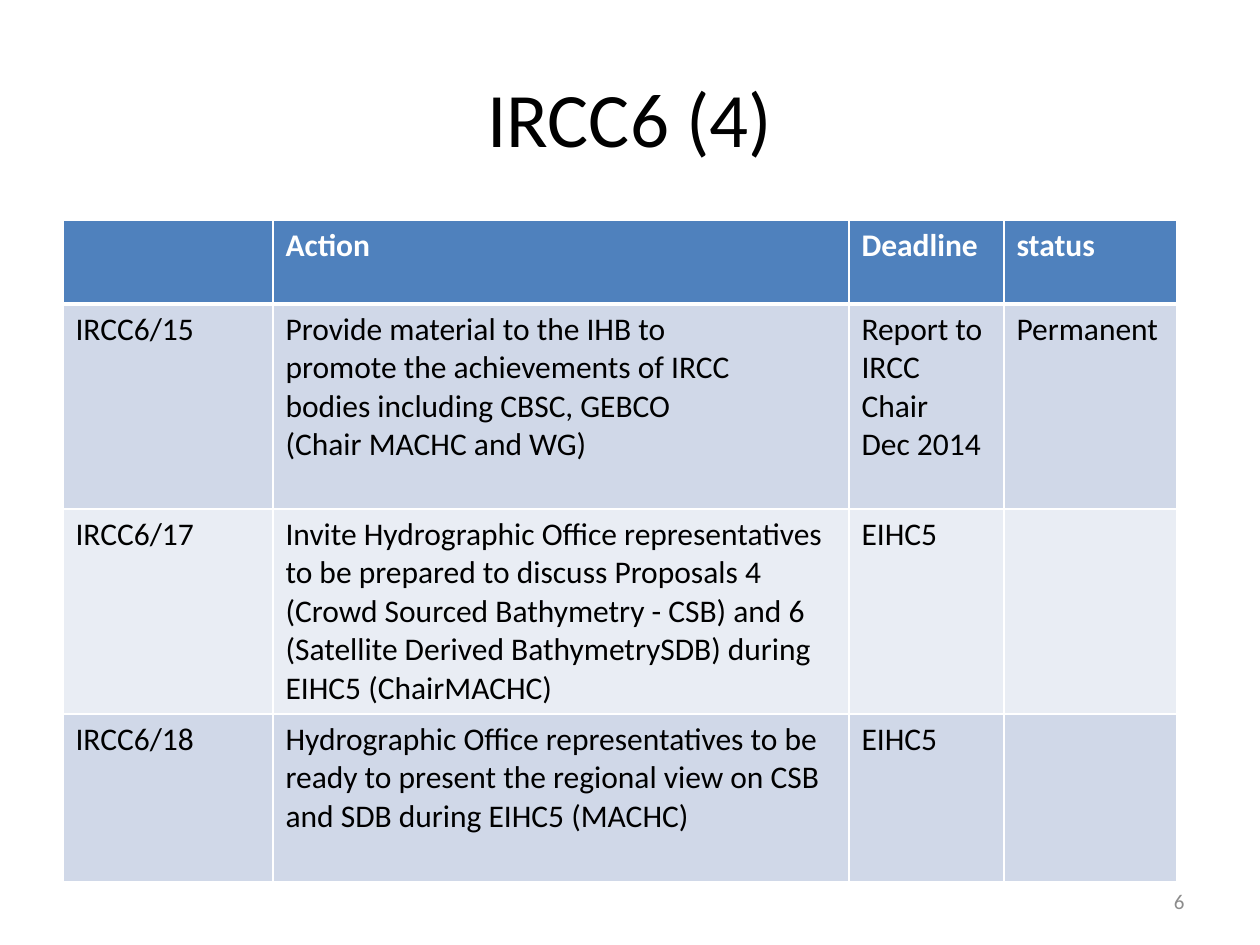
from lxml.etree import SubElement
from pptx import Presentation
from pptx.dml.color import RGBColor
from pptx.enum.text import MSO_ANCHOR, PP_ALIGN
from pptx.oxml.ns import qn
from pptx.util import Pt

PX = 914400 / 126  # EMU per px
THEME = {
    "font": "Calibri",
    "title": {"size": 44, "color": "000000", "bold": False},
    "number": {"size": 12, "color": "8C8C8C", "bold": False},
    "head": {"size": 18, "color": "FFFFFF", "bold": True},
    "body": {"size": 18, "color": "000000", "bold": False},
    "head_fill": "4F81BD",
    "bands": ["E9EDF4", "D0D8E8"],
    "border": "FFFFFF",
}


def px(n):
    return round(n * PX)


def write(tf, lines, style, align=PP_ALIGN.LEFT):
    """Fill a text frame with one paragraph per line."""
    tf.word_wrap = True
    for i, line in enumerate(lines):
        p = tf.paragraphs[0] if i == 0 else tf.add_paragraph()
        p.alignment = align
        r = p.add_run()
        r.text = line
        fmt = {"name": THEME["font"], "size": Pt(style["size"]), "bold": style["bold"]}
        for key, value in fmt.items():
            setattr(r.font, key, value)
        r.font.color.rgb = RGBColor.from_string(style["color"])


prs = Presentation()
prs.slide_width, prs.slide_height = px(1260), px(945)
s = prs.slides.add_slide(prs.slide_layouts[6])

# Title and slide number
for box, text, style, align in [
    ((63, 38, 1134, 158), "IRCC6 (4)", "title", PP_ALIGN.CENTER),
    ((903, 876, 294, 50), "6", "number", PP_ALIGN.RIGHT),
]:
    sp = s.shapes.add_textbox(*map(px, box))
    sp.text_frame.vertical_anchor = MSO_ANCHOR.MIDDLE
    write(sp.text_frame, [text], THEME[style], align)

# Table content: each cell is a list of paragraphs
rows = [
    [[], ["Action"], ["Deadline"], ["status"]],
    [
        ["IRCC6/15"],
        ["Provide material to the IHB to", "promote the achievements of IRCC",
         "bodies including CBSC, GEBCO", "(Chair MACHC and WG)"],
        ["Report to", "IRCC Chair", "Dec 2014"],
        ["Permanent"],
    ],
    [
        ["IRCC6/17"],
        ["Invite Hydrographic Office representatives to be prepared to discuss "
         "Proposals 4 (Crowd Sourced Bathymetry - CSB) and 6",
         "(Satellite Derived BathymetrySDB) during EIHC5 (ChairMACHC)"],
        ["EIHC5"],
        [],
    ],
    [
        ["IRCC6/18"],
        ["Hydrographic Office representatives to be ready to present the "
         "regional view on CSB", "and SDB during EIHC5 (MACHC)"],
        ["EIHC5"],
        [],
    ],
]
widths = [210, 576, 155, 173]
heights = [84, 205, 205, 168]

# Table grid
table = s.shapes.add_table(
    len(rows), len(widths), px(63), px(220), px(sum(widths)), px(sum(heights))
).table
for col, width in zip(table.columns, widths):
    col.width = px(width)
for row, height in zip(table.rows, heights):
    row.height = px(height)

# Cells: borders, band fill, text
for i, row in enumerate(rows):
    for j, lines in enumerate(row):
        cell = table.cell(i, j)
        tcPr = cell._tc.get_or_add_tcPr()
        for side in "LRTB":
            under_head = (i, side) in [(0, "B"), (1, "T")]
            ln = SubElement(tcPr, qn(f"a:ln{side}"), w=str(Pt(3 if under_head else 1)))
            fill = SubElement(ln, qn("a:solidFill"))
            SubElement(fill, qn("a:srgbClr"), val=THEME["border"])
        cell.fill.solid()
        color = THEME["bands"][i % 2] if i else THEME["head_fill"]
        cell.fill.fore_color.rgb = RGBColor.from_string(color)
        write(cell.text_frame, lines, THEME["body" if i else "head"])

prs.save("out.pptx")
